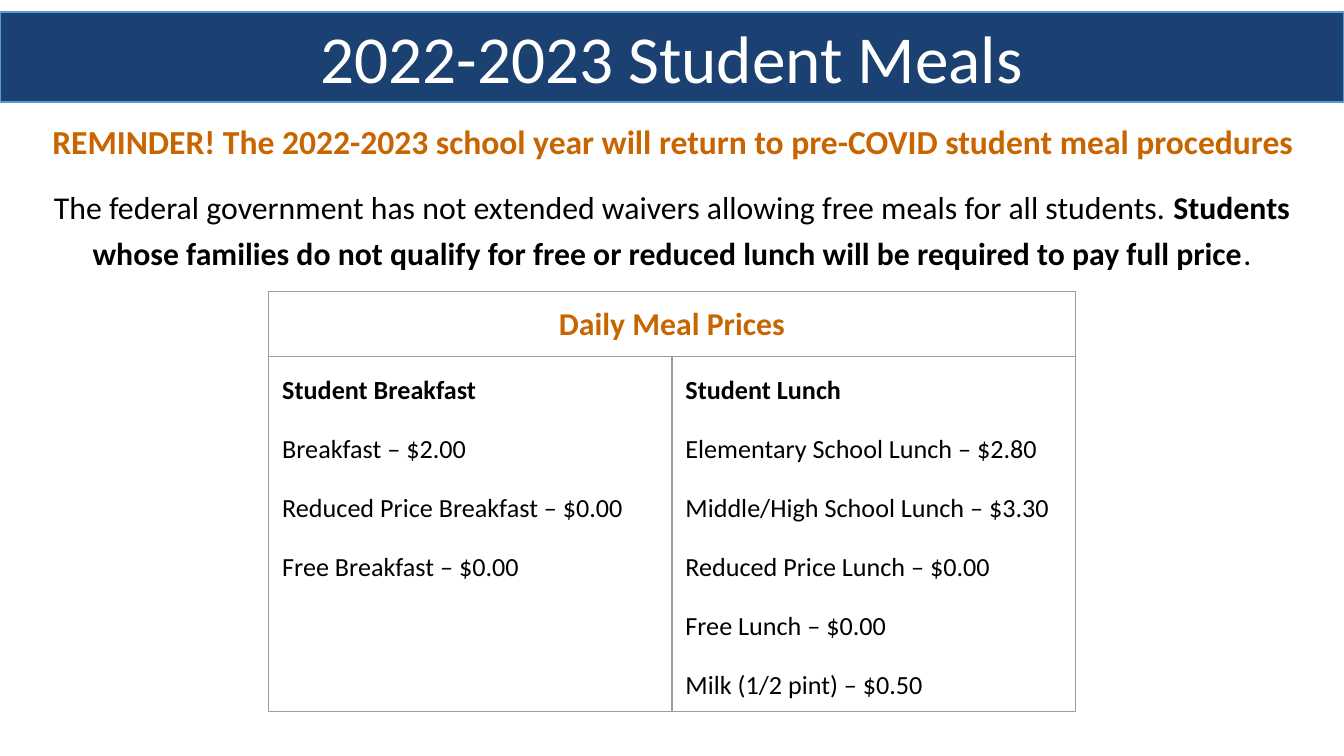
from dataclasses import dataclass

from lxml import etree
from pptx import Presentation
from pptx.dml.color import RGBColor
from pptx.enum.shapes import MSO_SHAPE
from pptx.enum.text import MSO_ANCHOR, PP_ALIGN
from pptx.oxml.ns import qn
from pptx.util import Inches, Pt

RECTANGLE = MSO_SHAPE.RECTANGLE
MIDDLE = MSO_ANCHOR.MIDDLE
CENTER, LEFT = PP_ALIGN.CENTER, PP_ALIGN.LEFT

SLIDE_WIDTH = 10
SLIDE_HEIGHT = SLIDE_WIDTH * 9 / 16


@dataclass(frozen=True)
class Theme:
    font: str = "Calibri"
    navy: str = "1B4072"
    blue: str = "5B9BD5"
    orange: str = "C86500"
    black: str = "000000"
    white: str = "FFFFFF"
    grid: str = "9E9E9E"
    title: int = 36
    reminder: int = 18
    body: int = 17
    price: int = 14
    hairline: float = 0.75
    inset: float = 0.1


THEME = Theme()

BREAKFAST = [
    "Student Breakfast",
    "Breakfast – $2.00",
    "Reduced Price Breakfast – $0.00",
    "Free Breakfast – $0.00",
]
LUNCH = [
    "Student Lunch",
    "Elementary School Lunch – $2.80",
    "Middle/High School Lunch – $3.30",
    "Reduced Price Lunch – $0.00",
    "Free Lunch – $0.00",
    "Milk (1/2 pint) – $0.50",
]


def write(paragraph, pieces, size, color, align=LEFT):
    """Fill a paragraph with (text, bold) pieces in one size and colour."""
    paragraph.alignment = align
    for text, bold in pieces:
        run = paragraph.add_run()
        run.text = text
        run.font.name = THEME.font
        run.font.size = Pt(size)
        run.font.bold = bold
        run.font.color.rgb = RGBColor.from_string(color)


def set_insets(holder):
    holder.margin_left = holder.margin_right = Inches(THEME.inset)
    holder.margin_top = holder.margin_bottom = Inches(THEME.inset)


def add_banner(slide, box, title):
    banner = slide.shapes.add_shape(RECTANGLE, *map(Inches, box))
    banner.shadow.inherit = False
    banner.fill.solid()
    banner.fill.fore_color.rgb = RGBColor.from_string(THEME.navy)
    banner.line.color.rgb = RGBColor.from_string(THEME.blue)
    banner.line.width = Pt(THEME.hairline)
    frame = banner.text_frame
    frame.vertical_anchor = MIDDLE
    write(frame.paragraphs[0], [(title, False)], THEME.title, THEME.white, CENTER)


def add_notice(slide, box, pieces, size, color):
    frame = slide.shapes.add_textbox(*map(Inches, box)).text_frame
    frame.word_wrap = True
    set_insets(frame)
    paragraph = frame.paragraphs[0]
    paragraph.line_spacing = 1.2
    paragraph.space_after = Pt(10)
    write(paragraph, pieces, size, color, CENTER)


def style_cell(cell):
    """Clear the fill and draw a thin line on all four sides."""
    set_insets(cell)
    properties = cell._tc.get_or_add_tcPr()
    for side in ("a:lnL", "a:lnR", "a:lnT", "a:lnB"):
        border = etree.SubElement(properties, qn(side), w=str(Pt(THEME.hairline)))
        fill = etree.SubElement(border, qn("a:solidFill"))
        etree.SubElement(fill, qn("a:srgbClr"), val=THEME.grid)
    cell.fill.background()


def fill_prices(cell, lines):
    """Write a bold heading followed by one price per paragraph."""
    frame = cell.text_frame
    for index, line in enumerate(lines):
        heading = index == 0
        paragraph = frame.paragraphs[0] if heading else frame.add_paragraph()
        paragraph.line_spacing = 1.15
        paragraph.space_before = Pt(14 if heading else 12)
        write(paragraph, [(line, heading)], THEME.price, THEME.black)
    paragraph.space_after = Pt(12)


def add_price_table(slide, box, heading, columns):
    left, top, width, height = box
    heading_height = 0.47
    table = slide.shapes.add_table(2, len(columns), *map(Inches, box)).table
    table.first_row = table.horz_banding = False
    for column in table.columns:
        column.width = Inches(width / len(columns))
    table.rows[0].height = Inches(heading_height)
    table.rows[1].height = Inches(height - heading_height)
    for cell in table.iter_cells():
        style_cell(cell)

    # Heading across all columns
    title = table.cell(0, 0)
    title.merge(table.cell(0, len(columns) - 1))
    write(title.text_frame.paragraphs[0], [(heading, True)],
          THEME.body, THEME.orange, CENTER)

    # Price lists
    for index, lines in enumerate(columns):
        fill_prices(table.cell(1, index), lines)


def main():
    deck = Presentation()
    deck.slide_width = Inches(SLIDE_WIDTH)
    deck.slide_height = Inches(SLIDE_HEIGHT)
    slide = deck.slides.add_slide(deck.slide_layouts[6])

    add_banner(slide, (0, 0.09, SLIDE_WIDTH, 0.67), "2022-2023 Student Meals")
    add_notice(
        slide, (0.26, 0.74, 9.5, 0.5),
        [("REMINDER! The 2022-2023 school year will return to "
          "pre-COVID student meal procedures", True)],
        THEME.reminder, THEME.orange)
    add_notice(
        slide, (0.25, 1.24, 9.5, 0.83),
        [("The federal government has not extended waivers allowing "
          "free meals for all students. ", False),
         ("Students whose families do not qualify for free or reduced "
          "lunch will be required to pay full price", True),
         (".", False)],
        THEME.body, THEME.black)
    add_price_table(slide, (2, 2.17, 6, 2.78), "Daily Meal Prices",
                    [BREAKFAST, LUNCH])

    deck.save("out.pptx")


if __name__ == "__main__":
    main()
